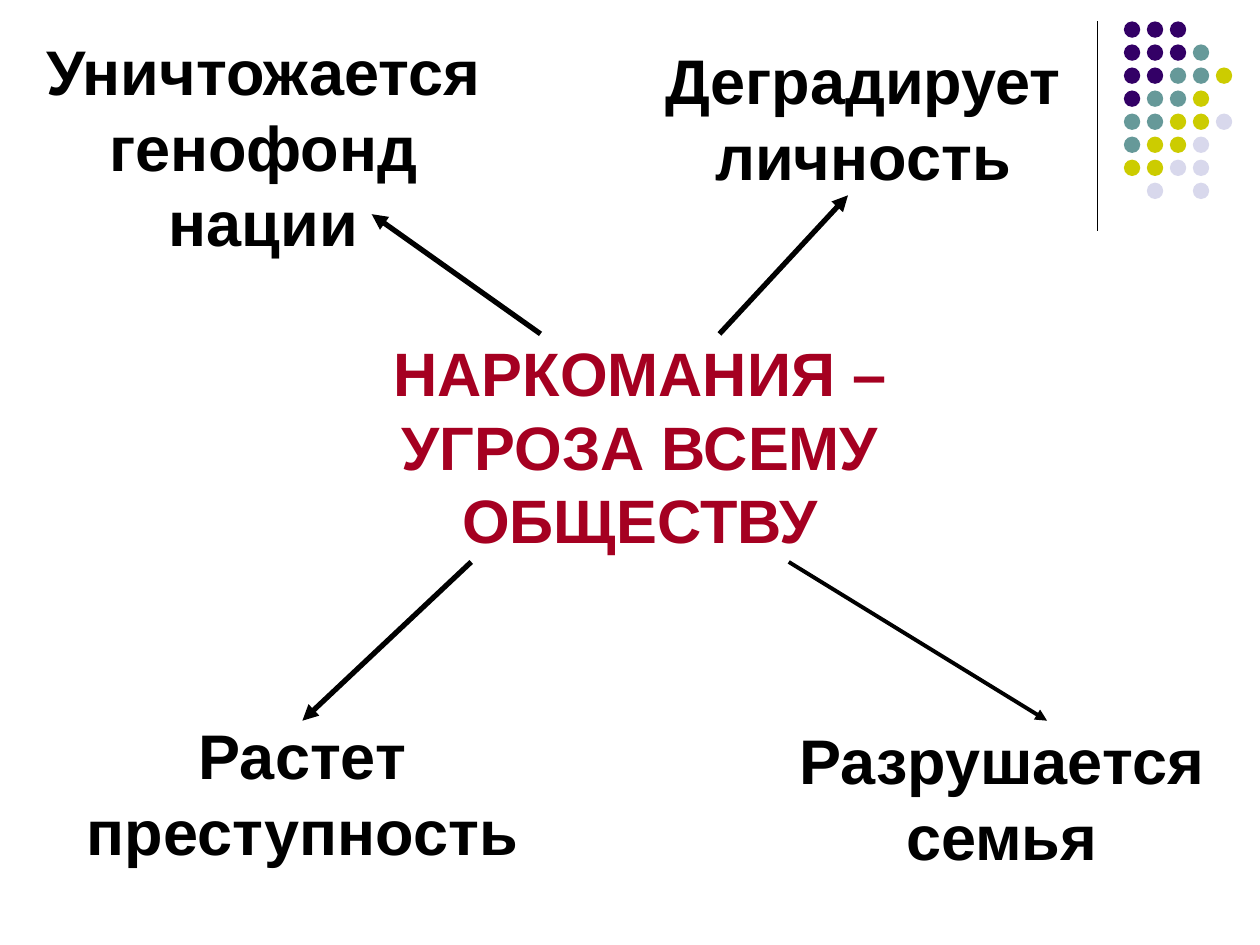
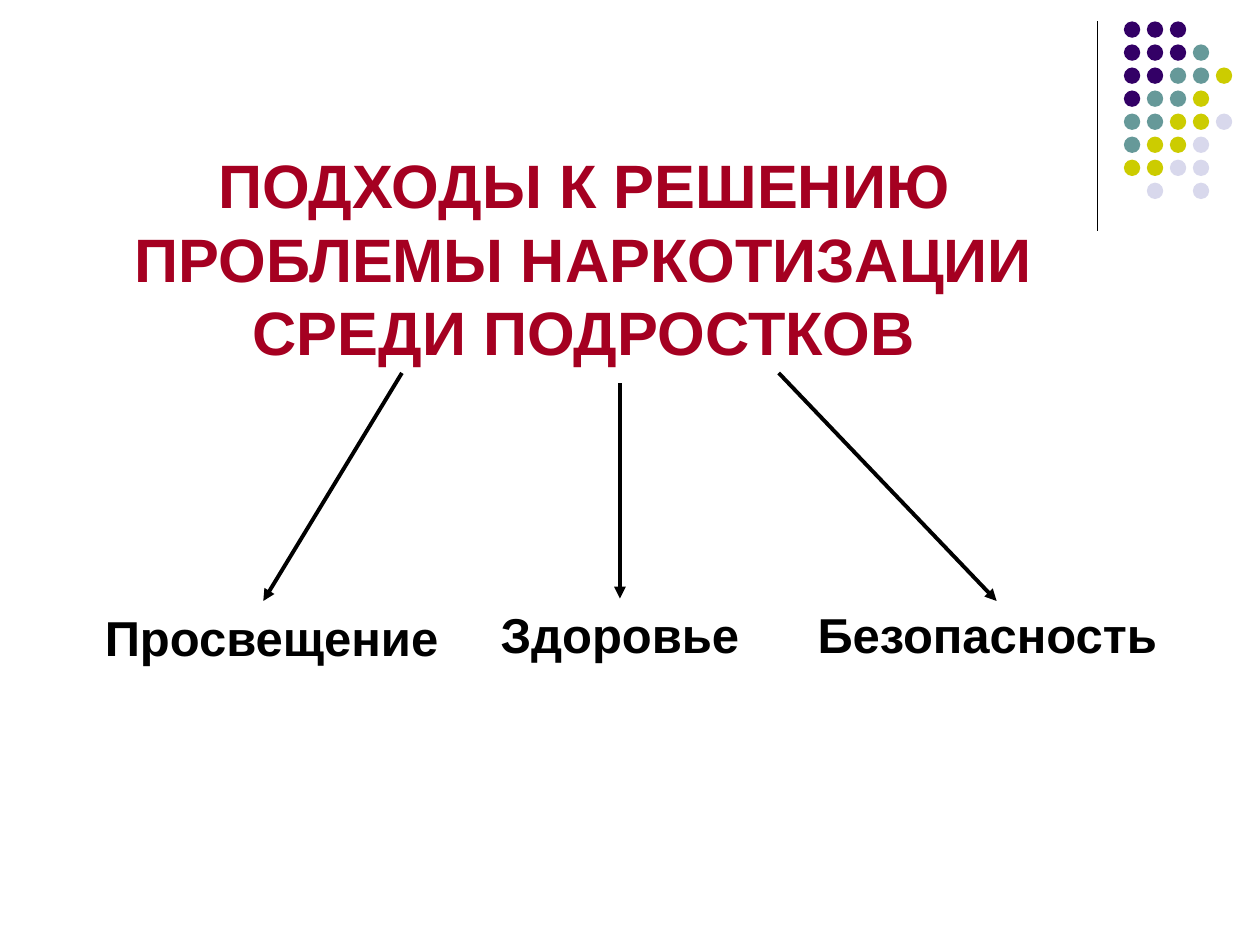
from lxml import etree
from pptx import Presentation
from pptx.dml.color import RGBColor
from pptx.enum.shapes import MSO_CONNECTOR, MSO_SHAPE
from pptx.enum.text import MSO_ANCHOR, PP_ALIGN
from pptx.oxml.ns import qn
from pptx.util import Inches, Pt

STRAIGHT = MSO_CONNECTOR.STRAIGHT
OVAL = MSO_SHAPE.OVAL
TOP, BOTTOM = MSO_ANCHOR.TOP, MSO_ANCHOR.BOTTOM
CENTER = PP_ALIGN.CENTER

BLACK = RGBColor(0x00, 0x00, 0x00)
CRIMSON = RGBColor(0xA5, 0x00, 0x21)
PURPLE = RGBColor(0x33, 0x00, 0x66)
TEAL = RGBColor(0x66, 0x99, 0x99)
OLIVE = RGBColor(0xCC, 0xCC, 0x00)
LAVENDER = RGBColor(0xD8, 0xD8, 0xEC)

FONT = "Arial"
TITLE_SIZE = 35
DOT_COLOURS = {"P": PURPLE, "T": TEAL, "O": OLIVE, "L": LAVENDER}
DOT_ROWS = ["PPP", "PPPT", "PPTTO", "PTTO", "TTOOL", "TOOL", "OOLL", " L L"]
DOT_BOX = (8.92, 0.17, 0.86, 1.41)
DOT_SIZE = 0.13
TOP_SIDE = 0


def add_line(page, start, end, width, arrow=False):
    """Draw a straight black line, with an arrowhead at its end if asked."""
    line = page.shapes.add_connector(STRAIGHT, *map(Inches, start + end))
    line.line.color.rgb = BLACK
    line.line.width = Pt(width)
    if arrow:
        etree.SubElement(line.line._get_or_add_ln(), qn("a:tailEnd"), type="triangle")
    etree.SubElement(line._element.spPr, qn("a:effectLst"))
    return line


def add_text(page, box, text, size, colour=BLACK, anchor=TOP):
    """Write centred bold text in a wrapping box."""
    label = page.shapes.add_textbox(*map(Inches, box))
    frame = label.text_frame
    frame.word_wrap = True
    frame.vertical_anchor = anchor
    para = frame.paragraphs[0]
    para.alignment = CENTER
    span = para.add_run()
    span.text = text
    span.font.name = FONT
    span.font.size = Pt(size)
    span.font.bold = True
    span.font.color.rgb = colour
    return label


def add_title(page, box, text):
    """Write a crimson title that rests on the bottom of its box."""
    return add_text(page, box, text, TITLE_SIZE, CRIMSON, BOTTOM)


def add_dots(page, box):
    """Fill the box with the grid of coloured dots."""
    left, top, width, height = box
    column_step = (width - DOT_SIZE) / (max(map(len, DOT_ROWS)) - 1)
    row_step = (height - DOT_SIZE) / (len(DOT_ROWS) - 1)
    group = page.shapes.add_group_shape()
    for row, codes in enumerate(DOT_ROWS):
        for column, code in enumerate(codes):
            if code == " ":
                continue
            dot = group.shapes.add_shape(
                OVAL, Inches(left + column * column_step), Inches(top + row * row_step),
                Inches(DOT_SIZE), Inches(DOT_SIZE))
            dot.shadow.inherit = False
            dot.fill.solid()
            dot.fill.fore_color.rgb = DOT_COLOURS[code]
            dot.line.fill.background()


def add_page(deck):
    """Add a blank page with the corner rule and dots."""
    page = deck.slides.add_slide(deck.slide_layouts[6])
    add_line(page, (8.71, 0.17), (8.71, 1.83), 0.75)
    add_dots(page, DOT_BOX)
    return page


def build_threat_page(deck):
    """Show the threat in the middle and its four consequences around it."""
    page = add_page(deck)
    add_title(page, (2.32, 3.04, 5.52, 1.42), "НАРКОМАНИЯ – УГРОЗА ВСЕМУ ОБЩЕСТВУ")
    consequences = [
        ("Уничтожается генофонд нации", (0.2, 0.21, 3.78, 1.9), (4.29, 2.65), (2.95, 1.7), 3),
        ("Растет преступность", (0.43, 5.64, 3.94, 1.3), (3.74, 4.46), (2.4, 5.72), 3),
        ("Разрушается семья", (6.1, 5.68, 3.7, 1.3), (6.26, 4.46), (8.31, 5.72), 2.25),
        ("Деградирует личность", (5.08, 0.28, 3.54, 1.3), (5.71, 2.65), (6.73, 1.55), 3),
    ]
    for text, box, start, end, width in consequences:
        add_text(page, box, text, 36)
        add_line(page, start, end, width, arrow=True)


def build_approaches_page(deck):
    """Show the title and the three approaches that follow from it."""
    page = add_page(deck)
    add_title(page, (0.51, 1.55, 8.25, 1.42),
              "ПОДХОДЫ К РЕШЕНИЮ ПРОБЛЕМЫ НАРКОТИЗАЦИИ СРЕДИ ПОДРОСТКОВ")
    approaches = [
        ("Просвещение", (0.7, 4.77, 2.91, 0.57), (3.19, 2.96), (2.09, 4.77), False),
        ("Здоровье", (3.62, 4.75, 2.6, 0.57), (4.92, 3.04), (4.92, 4.75), True),
        ("Безопасность", (6.34, 4.75, 2.99, 0.57), (6.18, 2.96), (7.91, 4.77), False),
    ]
    for text, box, start, end, joined in approaches:
        label = add_text(page, box, text, 28)
        arrow = add_line(page, start, end, 2.25, arrow=True)
        if joined:
            arrow.end_connect(label, TOP_SIDE)


def main():
    """Build the deck and save it."""
    deck = Presentation()
    deck.slide_width, deck.slide_height = Inches(10), Inches(7.5)
    build_threat_page(deck)
    build_approaches_page(deck)
    deck.save("out.pptx")


if __name__ == "__main__":
    main()
